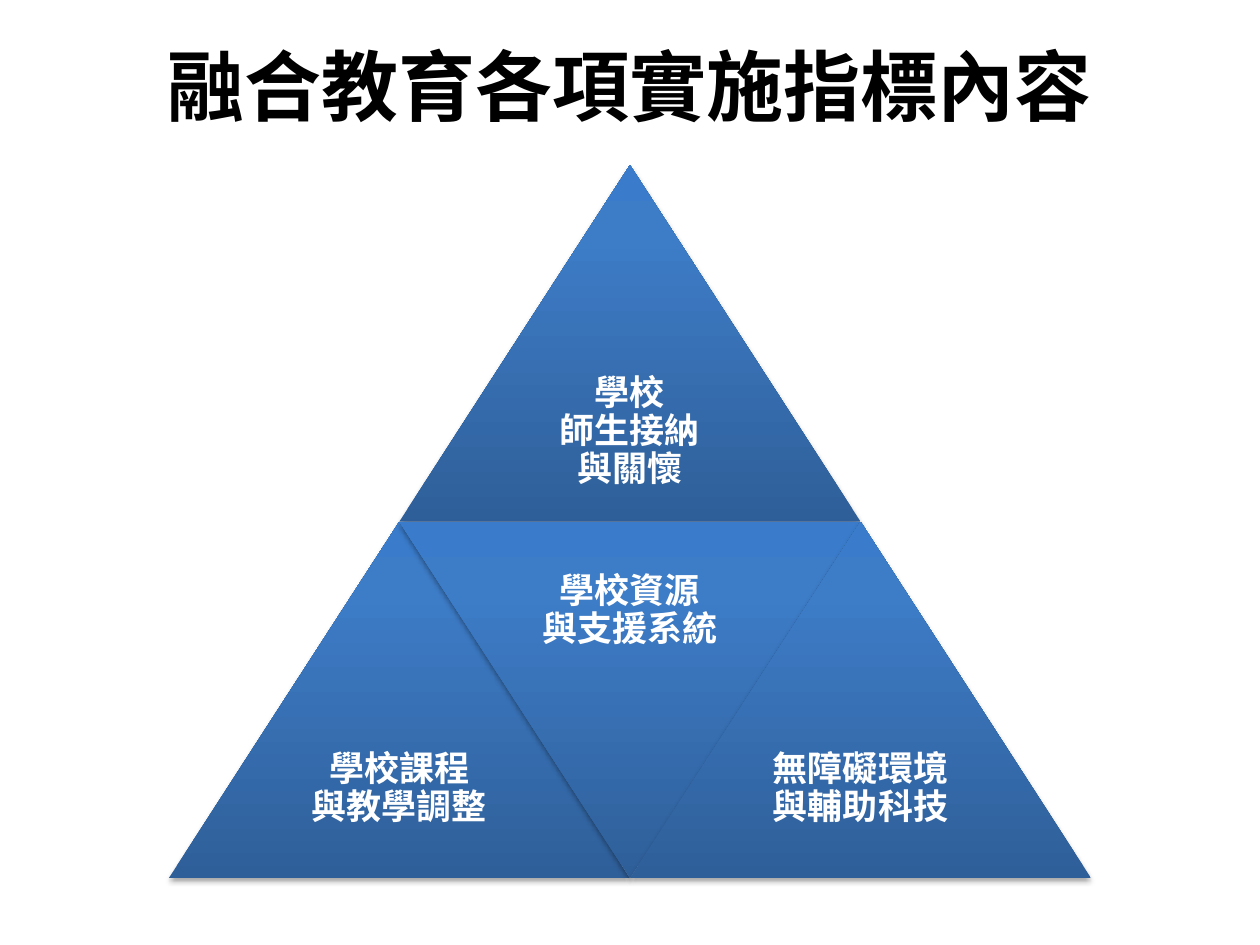
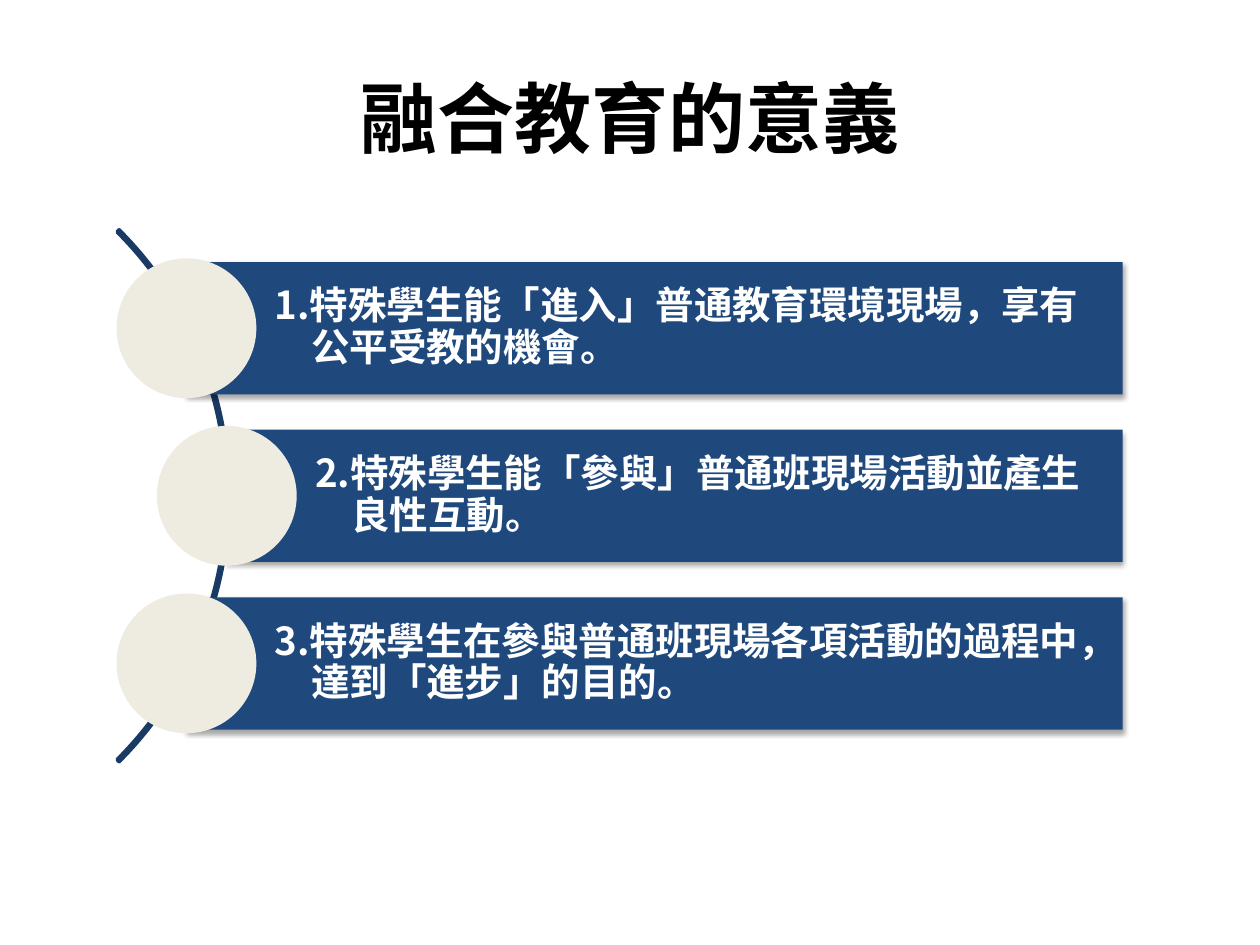
from dataclasses import dataclass

from lxml import etree
from pptx import Presentation
from pptx.dml.color import RGBColor
from pptx.enum.shapes import MSO_SHAPE
from pptx.enum.text import MSO_ANCHOR, PP_ALIGN
from pptx.oxml import parse_xml
from pptx.oxml.ns import nsdecls, qn
from pptx.util import Inches, Pt

TRIANGLE = MSO_SHAPE.ISOSCELES_TRIANGLE
RECTANGLE = MSO_SHAPE.RECTANGLE
OVAL = MSO_SHAPE.OVAL
BLOCK_ARC = MSO_SHAPE.BLOCK_ARC
CENTER = PP_ALIGN.CENTER
LEFT = PP_ALIGN.LEFT
MIDDLE = MSO_ANCHOR.MIDDLE

BLACK = "000000"
WHITE = "FFFFFF"
NAVY = "1F497D"
ARC_NAVY = "193A64"
CREAM = "EEECE1"
GRADIENT = ((0, "2F5F99"), (80, "3D7CC7"), (100, "3A7CCB"))

CJK_FONT = "Noto Sans CJK SC"
DIAGRAM_FONT = "TeX Gyre Pagella"
TITLE_ONLY = 5

TRIANGLE_WIDTH, TRIANGLE_HEIGHT = 3.66, 2.83
PYRAMID_TOP, PYRAMID_CENTER = 1.31, 5
BAR_TOP, BAR_HEIGHT, BAR_PITCH, BAR_RIGHT = 2.08, 1.05, 1.33, 8.91
CIRCLE_SIZE = 1.11


@dataclass
class Indicator:
    lines: list[str]
    column: float
    row: int
    inverted: bool = False


@dataclass
class Meaning:
    text: str
    bar_left: float


INDICATORS = [
    Indicator(["學校", "師生接納", "與關懷"], 0, 0),
    Indicator(["學校課程", "與教學調整"], -0.5, 1),
    Indicator(["學校資源", "與支援系統"], 0, 1, inverted=True),
    Indicator(["無障礙環境", "與輔助科技"], 0.5, 1),
]
MEANINGS = [
    Meaning("1.特殊學生能「進入」普通教育環境現場，享有公平受教的機會。", 1.48),
    Meaning("2.特殊學生能「參與」普通班現場活動並產生良性互動。", 1.8),
    Meaning("3.特殊學生在參與普通班現場各項活動的過程中，達到「進步」的目的。", 1.48),
]


def color(value: str) -> RGBColor:
    return RGBColor.from_string(value)


def set_font(paragraph, name: str, size: float, hex_color: str) -> None:
    font = paragraph.font
    font.name = name
    font.size = Pt(size)
    font.bold = True
    font.color.rgb = color(hex_color)
    properties = paragraph._p.pPr.find(qn("a:defRPr"))
    etree.SubElement(properties, qn("a:ea"), typeface=CJK_FONT)


def add_titled_slide(presentation, title: str, top: float):
    slide = presentation.slides.add_slide(presentation.slide_layouts[TITLE_ONLY])
    shape = slide.shapes.title
    shape.left, shape.top = Inches(0.5), Inches(top)
    shape.width, shape.height = Inches(9), Inches(1.25)
    frame = shape.text_frame
    frame.text = title
    frame.vertical_anchor = MIDDLE
    paragraph = frame.paragraphs[0]
    paragraph.alignment = CENTER
    set_font(paragraph, CJK_FONT, 44, BLACK)
    return slide


def add_plain_shape(slide, kind, left: float, top: float, width: float, height: float):
    shape = slide.shapes.add_shape(
        kind, Inches(left), Inches(top), Inches(width), Inches(height)
    )
    shape.shadow.inherit = False
    shape.line.fill.background()
    return shape


def fill_solid(shape, hex_color: str) -> None:
    shape.fill.solid()
    shape.fill.fore_color.rgb = color(hex_color)


def fill_gradient(shape) -> None:
    stops = "".join(
        f'<a:gs pos="{position * 1000}"><a:srgbClr val="{value}"/></a:gs>'
        for position, value in GRADIENT
    )
    gradient = parse_xml(
        f'<a:gradFill {nsdecls("a")} rotWithShape="0"><a:gsLst>{stops}</a:gsLst>'
        '<a:lin ang="16200000" scaled="0"/></a:gradFill>'
    )
    shape._element.spPr.find(qn("a:prstGeom")).addnext(gradient)


def add_shadow(shape) -> None:
    shape._element.spPr.find(qn("a:effectLst")).append(parse_xml(
        f'<a:outerShdw {nsdecls("a")} blurRad="40000" dist="23000" dir="5400000" '
        f'rotWithShape="0"><a:srgbClr val="{BLACK}"><a:alpha val="35000"/>'
        '</a:srgbClr></a:outerShdw>'
    ))


def write_lines(shape, lines: list[str], font: str, size: float, alignment,
                margin: float, left_margin: float) -> None:
    frame = shape.text_frame
    frame.word_wrap = True
    frame.vertical_anchor = MIDDLE
    frame.margin_top = frame.margin_right = frame.margin_bottom = Inches(margin)
    frame.margin_left = Inches(left_margin)
    frame.text = "\n".join(lines)
    for paragraph in frame.paragraphs:
        paragraph.alignment = alignment
        paragraph.line_spacing = 0.9
        set_font(paragraph, font, size, WHITE)
    frame.paragraphs[-1].space_after = Pt(size * 0.35)


def add_indicator(slide, indicator: Indicator) -> None:
    left = PYRAMID_CENTER + (indicator.column - 0.5) * TRIANGLE_WIDTH
    top = PYRAMID_TOP + indicator.row * TRIANGLE_HEIGHT
    triangle = add_plain_shape(slide, TRIANGLE, left, top, TRIANGLE_WIDTH, TRIANGLE_HEIGHT)
    fill_gradient(triangle)
    add_shadow(triangle)
    label = triangle
    if indicator.inverted:
        triangle.rotation = 180
        label = slide.shapes.add_textbox(
            Inches(left + TRIANGLE_WIDTH / 4), Inches(top),
            Inches(TRIANGLE_WIDTH / 2), Inches(TRIANGLE_HEIGHT / 2),
        )
    write_lines(label, indicator.lines, DIAGRAM_FONT, 20, CENTER, 0.08, 0.08)


def add_meaning(slide, meaning: Meaning, row: int) -> None:
    top = BAR_TOP + row * BAR_PITCH
    bar = add_plain_shape(
        slide, RECTANGLE, meaning.bar_left, top, BAR_RIGHT - meaning.bar_left, BAR_HEIGHT
    )
    fill_solid(bar, NAVY)
    add_shadow(bar)
    write_lines(bar, [meaning.text], CJK_FONT, 22, LEFT, 0.06, 0.7)
    properties = bar.text_frame.paragraphs[0]._p.get_or_add_pPr()
    properties.set("marL", str(Inches(0.29)))
    properties.set("indent", str(-Inches(0.29)))
    circle = add_plain_shape(
        slide, OVAL, meaning.bar_left - CIRCLE_SIZE / 2,
        top + (BAR_HEIGHT - CIRCLE_SIZE) / 2, CIRCLE_SIZE, CIRCLE_SIZE,
    )
    fill_solid(circle, CREAM)


def add_arc(slide) -> None:
    arc = add_plain_shape(slide, BLOCK_ARC, -4.15, 0.95, 5.97, 5.97)
    for index, value in enumerate((189, 27, 0.004)):
        arc.adjustments[index] = value
    arc.fill.background()
    arc.line.color.rgb = color(ARC_NAVY)
    arc.line.width = Pt(2)


def main() -> None:
    presentation = Presentation()
    presentation.slide_width, presentation.slide_height = Inches(10), Inches(7.5)

    indicator_slide = add_titled_slide(presentation, "融合教育各項實施指標內容", 0.05)
    for indicator in INDICATORS:
        add_indicator(indicator_slide, indicator)

    meaning_slide = add_titled_slide(presentation, "融合教育的意義", 0.3)
    add_arc(meaning_slide)
    for row, meaning in enumerate(MEANINGS):
        add_meaning(meaning_slide, meaning, row)

    presentation.save("out.pptx")


if __name__ == "__main__":
    main()
